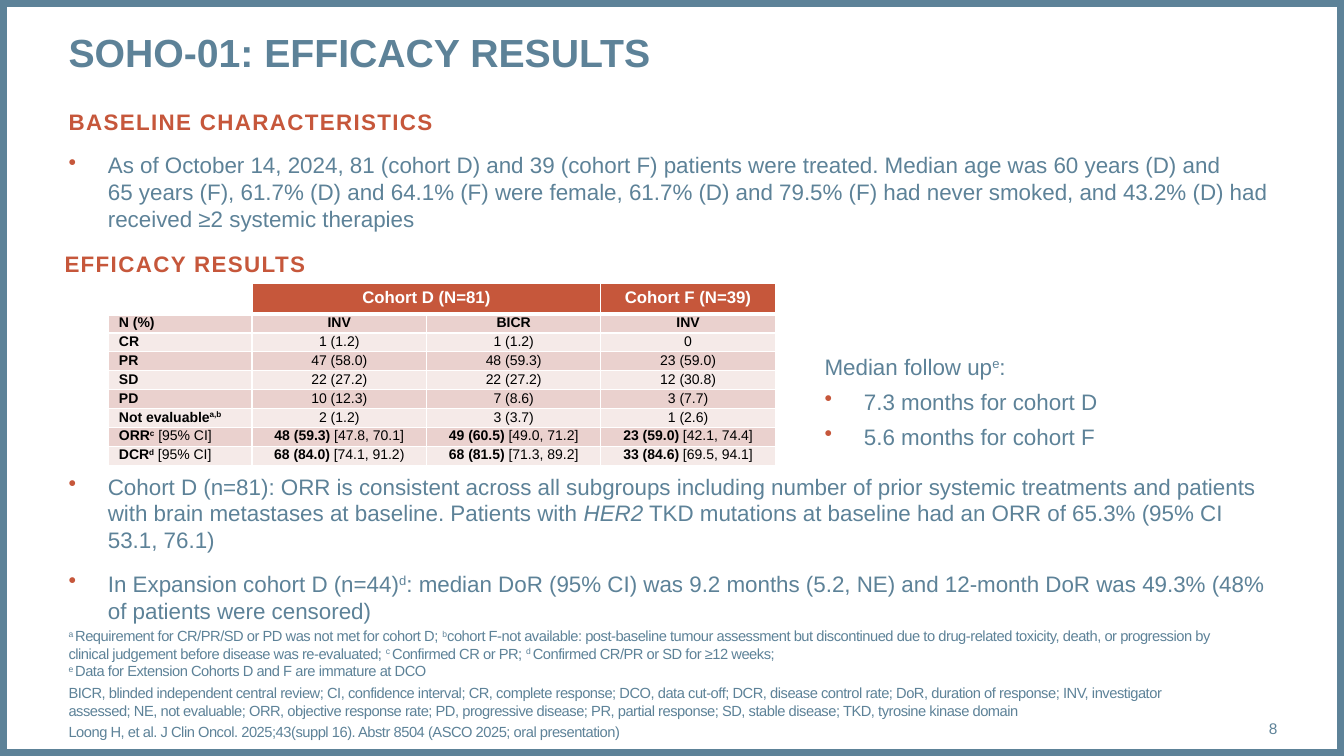
from collections.abc import Iterator
from copy import deepcopy
from dataclasses import dataclass, replace

from lxml.etree import SubElement
from pptx import Presentation
from pptx.dml.color import RGBColor as RGB
from pptx.enum.shapes import MSO_SHAPE as SHAPE
from pptx.enum.text import MSO_ANCHOR as ANCHOR, MSO_AUTO_SIZE as AUTO, PP_ALIGN as ALIGN
from pptx.oxml.ns import qn
from pptx.util import Inches, Pt


@dataclass(frozen=True)
class Theme:
    """Colours, font and type sizes of the slide."""
    font: str = "Arial"
    slate: str = "5D8298"
    rust: str = "C6573B"
    white: str = "FFFFFF"
    black: str = "000000"
    bands: tuple[str, str] = ("EAD1CE", "F5EAE8")
    title: float = 28
    body: float = 16
    header: float = 12
    number: float = 11
    note: float = 10.5
    cell: float = 10


T = Theme()


@dataclass(frozen=True)
class Style:
    """Look of one paragraph."""
    size: float = T.body
    color: str = T.slate
    bold: bool = False
    spacing: float = 0
    before: float = 0
    bullet: bool = False
    align: ALIGN = ALIGN.LEFT


@dataclass(frozen=True)
class Para:
    """Text with ^superscript^, *bold* and _italic_ marks, and its style."""
    text: str
    style: Style


@dataclass(frozen=True)
class Box:
    """A text box: place, paragraphs, insets, anchor and wrapping."""
    at: tuple[float, float, float, float]
    paras: tuple[Para, ...]
    insets: tuple[float, float, float, float] = (0, 0, 0, 0)
    anchor: ANCHOR = ANCHOR.TOP
    wrap: bool = True


HEADING = Style(color=T.rust, bold=True, spacing=1)
BULLET = Style(before=12, bullet=True)
FOLLOW_UP = replace(BULLET, before=6)
NOTE = Style(size=T.note, spacing=-0.3, before=3)
HEADER = Style(size=T.header, color=T.white, bold=True, align=ALIGN.CENTER)
LABEL = Style(size=T.cell, color=T.black)
VALUE = replace(LABEL, align=ALIGN.CENTER)

TITLE = Box((0.68, 0.28, 11.99, 0.94),
            (Para("SOHO-01: EFFICACY RESULTS", Style(size=T.title, bold=True)),))
BOXES = (
    Box((0.68, 1.07, 11.99, 1.3), (
        Para("BASELINE CHARACTERISTICS", HEADING),
        Para("As of October 14, 2024, 81 (cohort D) and 39 (cohort F) patients were treated. "
             "Median age was 60 years (D) and\n65 years (F), 61.7% (D) and 64.1% (F) were female, "
             "61.7% (D) and 79.5% (F) had never smoked, and 43.2% (D) had received ≥2 systemic "
             "therapies", BULLET))),
    Box((0.64, 2.43, 2.53, 0.37), (Para("EFFICACY RESULTS", HEADING),),
        insets=(0, 0.05, 0.1, 0.05), wrap=False),
    Box((0.68, 4.69, 11.99, 1.5), (
        Para("Cohort D (n=81): ORR is consistent across all subgroups including number of prior "
             "systemic treatments and patients with brain metastases at baseline. Patients with "
             "_HER2_ TKD mutations at baseline had an ORR of 65.3% (95% CI 53.1, 76.1)", BULLET),
        Para("In Expansion cohort D (n=44)^d^: median DoR (95% CI) was 9.2 months (5.2, NE) and "
             "12-month DoR was 49.3% (48% of patients were censored)", BULLET))),
    Box((8.08, 3.45, 2.99, 1.08), (
        Para("Median follow up^e^:", Style()),
        Para("7.3 months for cohort D", FOLLOW_UP),
        Para("5.6 months for cohort F", FOLLOW_UP)), insets=(0.1, 0.05, 0.1, 0.05)),
    Box((0.68, 6.2, 11.34, 1.15), (
        Para("^a ^Requirement for CR/PR/SD or PD was not met for cohort D; ^b^cohort F-not "
             "available: post-baseline tumour assessment but discontinued due to drug-related "
             "toxicity, death, or progression by clinical judgement before disease was "
             "re-evaluated; ^c ^Confirmed CR or PR; ^d ^Confirmed CR/PR or SD for ≥12 weeks;\n"
             "^e ^Data for Extension Cohorts D and F are immature at DCO", NOTE),
        Para("BICR, blinded independent central review; CI, confidence interval; CR, complete "
             "response; DCO, data cut-off; DCR, disease control rate; DoR, duration of response; "
             "INV, investigator assessed; NE, not evaluable; ORR, objective response rate; PD, "
             "progressive disease; PR, partial response; SD, stable disease; TKD, tyrosine kinase "
             "domain", NOTE),
        Para("Loong H, et al. J Clin Oncol. 2025;43(suppl 16). Abstr 8504 (ASCO 2025; oral "
             "presentation)", NOTE)), anchor=ANCHOR.BOTTOM),
    Box((11.81, 7.03, 0.86, 0.4), (Para("8", Style(size=T.number, align=ALIGN.RIGHT)),),
        anchor=ANCHOR.MIDDLE),
)

COLUMNS = (1.42, 1.73, 1.73, 1.73)
TABLE_HEIGHT, HEADER_HEIGHT = 1.8, 0.3
ROWS = (
    ("", "Cohort D (N=81)", "", "Cohort F (N=39)"),
    ("*N (%)*", "*INV*", "*BICR*", "*INV*"),
    ("*CR*", "1 (1.2)", "1 (1.2)", "0"),
    ("*PR*", "47 (58.0)", "48 (59.3)", "23 (59.0)"),
    ("*SD*", "22 (27.2)", "22 (27.2)", "12 (30.8)"),
    ("*PD*", "10 (12.3)", "7 (8.6)", "3 (7.7)"),
    ("*Not evaluable^a,b^*", "2 (1.2)", "3 (3.7)", "1 (2.6)"),
    ("*ORR^c^* [95% CI]", "*48 (59.3)* [47.8, 70.1]", "*49 (60.5)* [49.0, 71.2]",
     "*23 (59.0)* [42.1, 74.4]"),
    ("*DCR^d^* [95% CI]", "*68 (84.0)* [74.1, 91.2)", "*68 (81.5)* [71.3, 89.2]",
     "*33 (84.6)* [69.5, 94.1]"),
)


def pieces(text: str) -> Iterator[tuple[str, frozenset[str]]]:
    """Split marked text into pieces, each with the marks that apply to it."""
    marks, piece = frozenset(), ""
    for ch in text:
        if ch in "^*_\n":
            if piece:
                yield piece, marks
            piece = ""
            if ch == "\n":
                yield ch, marks
            else:
                marks = marks ^ {ch}
        else:
            piece += ch
    if piece:
        yield piece, marks


def write(p, para: Para, first: bool) -> None:
    """Write one styled paragraph."""
    s = para.style
    pPr = p._p.get_or_add_pPr()
    if s.bullet:
        pPr.set("marL", str(Inches(0.39)))
        pPr.set("indent", str(-Inches(0.39)))
        SubElement(SubElement(pPr, qn("a:buClr")), qn("a:srgbClr")).set("val", T.rust)
        SubElement(pPr, qn("a:buChar")).set("char", "•")
    p.alignment = s.align
    p.line_spacing = 1.0
    p.space_before = Pt(0 if first else s.before)
    for text, marks in pieces(para.text):
        if text == "\n":
            p.add_line_break()
            continue
        r = p.add_run()
        r.text = text
        f = r.font
        f.name, f.size = T.font, Pt(s.size)
        f.bold, f.italic = s.bold or "*" in marks, "_" in marks
        f.color.rgb = RGB.from_string(s.color)
        rPr = r._r.get_or_add_rPr()
        if s.spacing:
            rPr.set("spc", str(round(s.spacing * 100)))
        if "^" in marks:
            rPr.set("baseline", "30000")
    for br in p._p.findall(qn("a:br")):
        br.append(deepcopy(p.runs[-1]._r.rPr))


def fill_box(sp, box: Box) -> None:
    """Place a text shape and write its paragraphs."""
    sp.left, sp.top, sp.width, sp.height = map(Inches, box.at)
    tf = sp.text_frame
    tf.word_wrap, tf.auto_size, tf.vertical_anchor = box.wrap, AUTO.NONE, box.anchor
    tf.margin_left, tf.margin_top, tf.margin_right, tf.margin_bottom = map(Inches, box.insets)
    for i, para in enumerate(box.paras):
        write(tf.add_paragraph() if i else tf.paragraphs[0], para, i == 0)


def set_borders(cell, top: float, bottom: float) -> None:
    """Give a cell white borders, ahead of its fill."""
    tcPr = cell._tc.get_or_add_tcPr()
    for i, (side, width) in enumerate(zip("LRTB", (1, 1, top, bottom))):
        ln = SubElement(tcPr, qn(f"a:ln{side}"), w=str(Pt(width)))
        SubElement(SubElement(ln, qn("a:solidFill")), qn("a:srgbClr")).set("val", T.white)
        tcPr.insert(i, ln)


def add_results_table(slide) -> None:
    """Draw the table of responses by cohort."""
    row_height = (TABLE_HEIGHT - HEADER_HEIGHT) / (len(ROWS) - 1)
    table = slide.shapes.add_table(len(ROWS), len(COLUMNS), Inches(1.08), Inches(2.81),
                                   Inches(sum(COLUMNS)), Inches(TABLE_HEIGHT)).table
    table.first_row = table.horz_banding = False
    for column, width in zip(table.columns, COLUMNS):
        column.width = Inches(width)
    for i, row in enumerate(ROWS):
        table.rows[i].height = Inches(row_height if i else HEADER_HEIGHT)
        for j, text in enumerate(row):
            cell = table.cell(i, j)
            cell.margin_top = cell.margin_bottom = Inches(0.01 if i else 0.05 if text else 0)
            if i or j:
                cell.fill.solid()
                cell.fill.fore_color.rgb = RGB.from_string(T.bands[(i - 1) % 2] if i else T.rust)
            else:
                cell.fill.background()
            set_borders(cell, 3 if i == 1 else 1, 1 if i else 3)
            style = HEADER if i == 0 else VALUE if j else LABEL
            write(cell.text_frame.paragraphs[0], Para(text, style), True)
    table.cell(0, 1).merge(table.cell(0, 2))


def main() -> None:
    """Build the efficacy results slide."""
    prs = Presentation()
    prs.slide_width, prs.slide_height = Inches(13.33), Inches(7.5)
    slide = prs.slides.add_slide(prs.slide_layouts[5])
    frame = slide.shapes.add_shape(SHAPE.RECTANGLE, 0, 0, prs.slide_width, prs.slide_height)
    frame.shadow.inherit = False
    frame.fill.background()
    frame.line.color.rgb, frame.line.width = RGB.from_string(T.slate), Pt(10)
    fill_box(slide.shapes.title, TITLE)
    for box in BOXES:
        fill_box(slide.shapes.add_textbox(*map(Inches, box.at)), box)
    add_results_table(slide)
    prs.save("out.pptx")


if __name__ == "__main__":
    main()
